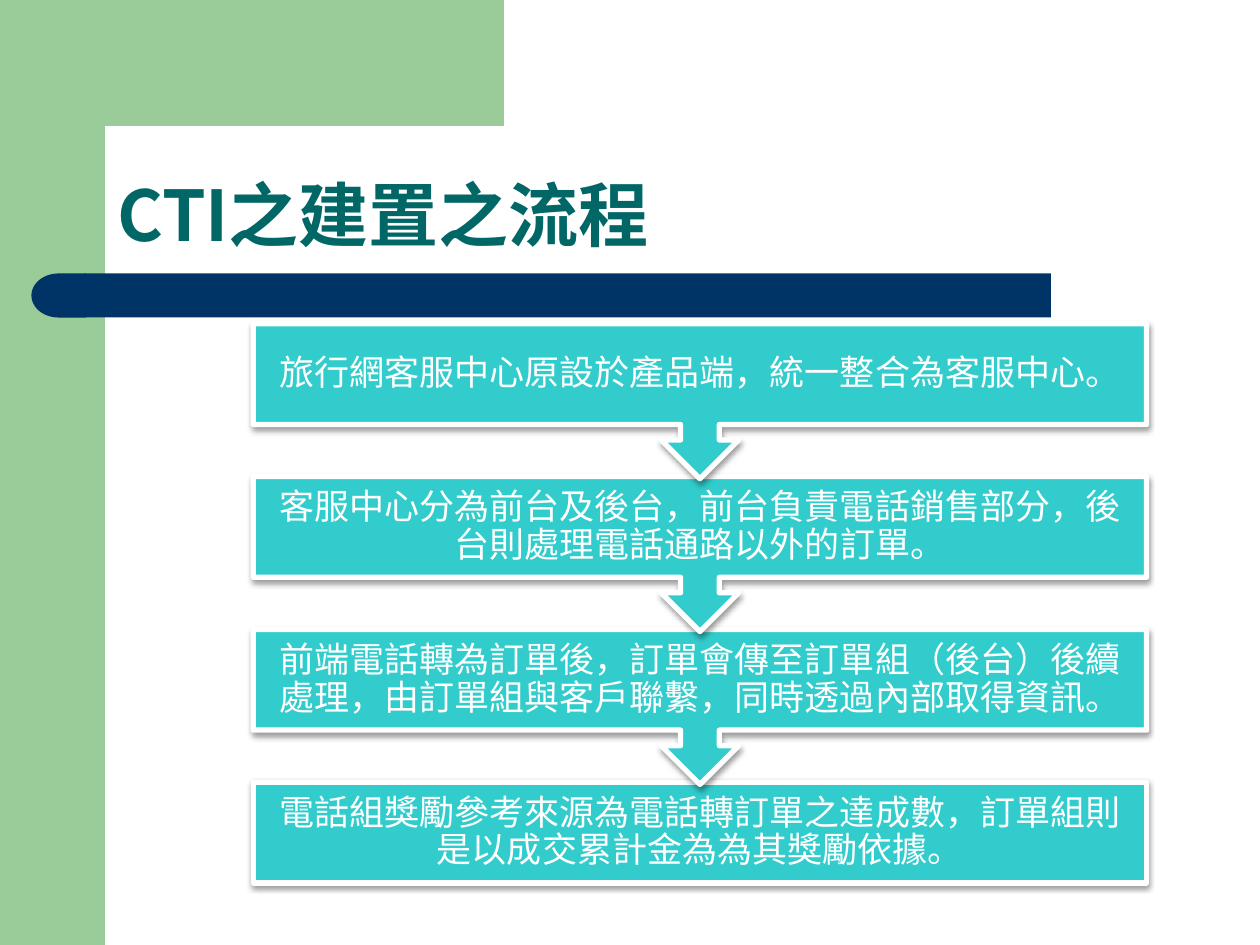
from math import cos, pi, sin

from lxml.etree import SubElement
from pptx import Presentation
from pptx.dml.color import RGBColor
from pptx.enum.shapes import MSO_SHAPE
from pptx.enum.text import MSO_ANCHOR, PP_ALIGN
from pptx.oxml.ns import qn
from pptx.util import Inches, Pt

TITLE = "CTI之建置之流程"
STEPS = [
    "旅行網客服中心原設於產品端，統一整合為客服中心。",
    "客服中心分為前台及後台，前台負責電話銷售部分，後台則處理電話通路以外的訂單。",
    "前端電話轉為訂單後，訂單會傳至訂單組（後台）後續處理，由訂單組與客戶聯繫，同時透過內部取得資訊。",
    "電話組獎勵參考來源為電話轉訂單之達成數，訂單組則是以成交累計金為為其獎勵依據。",
]
GREEN, NAVY, TEAL, CYAN, WHITE = "99CC99", "003366", "006666", "33CCCC", "FFFFFF"
WIDTH, HEIGHT = 10, 7.5
MARGIN = WIDTH / 12
STEP_LEFT, STEP_TOP, STEP_WIDTH = 2.01, 2.57, 7.09
STEP_PITCH, BOX_HEIGHT, CALLOUT_HEIGHT = 1.213, 0.8, 1.23


def color(value):
    return RGBColor.from_string(value)


def paint(shape, fill):
    shape.shadow.inherit = False
    shape.fill.solid()
    shape.fill.fore_color.rgb = color(fill)
    shape.line.fill.background()
    return shape


def add_block(page, kind, left, top, width, height, fill):
    place = [Inches(length) for length in (left, top, width, height)]
    return paint(page.shapes.add_shape(kind, *place), fill)


def add_corner(page):
    radius = 0.33
    center = MARGIN + radius
    angles = [pi / 2 * (1 + step / 12) for step in range(13)]
    arc = [(center + radius * cos(angle), center - radius * sin(angle)) for angle in angles]
    points = [(3.5, 0), (3.5, MARGIN), *arc, (MARGIN, 1.28), (0.5, 1.28), (0.5, 0)]
    builder = page.shapes.build_freeform(*points[0], scale=Inches(1))
    builder.add_line_segments(points[1:], close=True)
    paint(builder.convert_to_shape(), GREEN)


def write(shape, text, font_name, size, fill, anchor, align, bold=False):
    frame = shape.text_frame
    frame.word_wrap = True
    frame.vertical_anchor = anchor
    para = frame.paragraphs[0]
    para.alignment = align
    para.line_spacing = 0.9
    span = para.add_run()
    span.text = text
    font = span.font
    font.name, font.size, font.bold = font_name, Pt(size), bold
    font.color.rgb = color(fill)
    SubElement(span._r.get_or_add_rPr(), qn("a:ea"), typeface="Noto Sans CJK SC")
    return frame


def add_shadow(shape):
    effects = shape._element.spPr.find(qn("a:effectLst"))
    shadow = SubElement(effects, qn("a:outerShdw"), blurRad=str(Pt(3.1)),
                        dist=str(Pt(1.6)), dir="5400000", rotWithShape="0")
    black = SubElement(shadow, qn("a:srgbClr"), val="000000")
    SubElement(black, qn("a:alpha"), val="38000")


def add_step(page, index, text):
    last = index == len(STEPS) - 1
    kind = MSO_SHAPE.RECTANGLE if last else MSO_SHAPE.DOWN_ARROW_CALLOUT
    height = BOX_HEIGHT if last else CALLOUT_HEIGHT
    box = add_block(page, kind, STEP_LEFT, STEP_TOP + index * STEP_PITCH,
                    STEP_WIDTH, height, CYAN)
    box.line.color.rgb = color(WHITE)
    box.line.width = Pt(3)
    add_shadow(box)
    frame = write(box, text, "Arial", 20, WHITE, MSO_ANCHOR.MIDDLE, PP_ALIGN.CENTER)
    frame.margin_left = frame.margin_right = Inches(0.16)
    frame.margin_top = frame.margin_bottom = Inches(0)


def main():
    """Build the slide on the CTI set-up process."""
    deck = Presentation()
    deck.slide_width, deck.slide_height = Inches(WIDTH), Inches(HEIGHT)
    page = deck.slides.add_slide(deck.slide_layouts[6])

    add_block(page, MSO_SHAPE.RECTANGLE, 0, 0, MARGIN, HEIGHT, GREEN)
    add_corner(page)
    add_block(page, MSO_SHAPE.RECTANGLE, 0.67, 2.17, 7.67, 0.35, NAVY)
    cap = add_block(page, MSO_SHAPE.FLOWCHART_DELAY, 0.25, 2.17, 0.43, 0.35, NAVY)
    cap._element.spPr.get_or_add_xfrm().set("flipH", "1")

    title = page.shapes.add_textbox(Inches(MARGIN), Inches(MARGIN), Inches(8.67), Inches(1.25))
    write(title, TITLE, "Noto Sans CJK SC", 40, TEAL, MSO_ANCHOR.BOTTOM, PP_ALIGN.LEFT, bold=True)

    for index, text in reversed(list(enumerate(STEPS))):
        add_step(page, index, text)
    deck.save("out.pptx")


if __name__ == "__main__":
    main()
